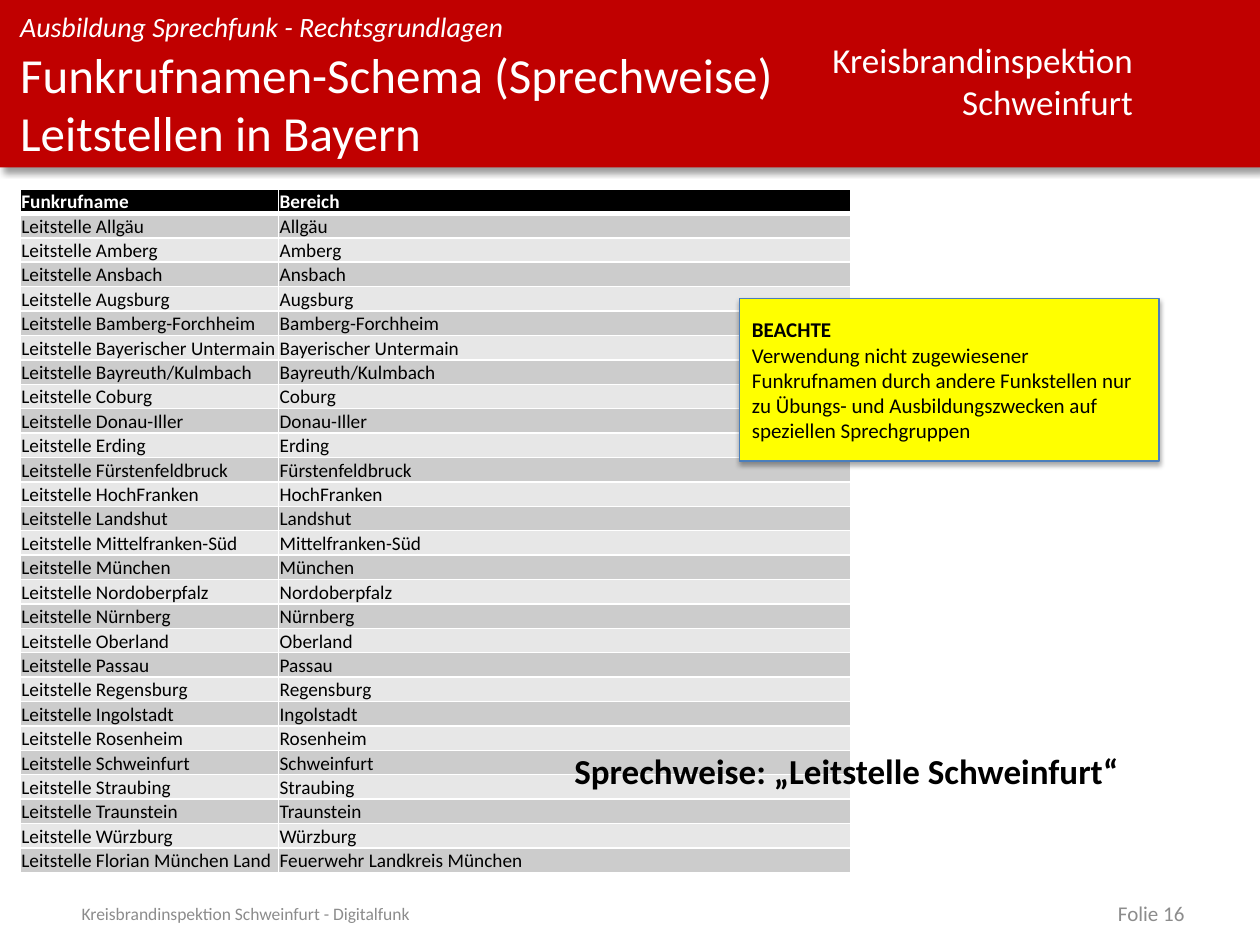
from dataclasses import dataclass

import lxml.etree
import pptx
import pptx.dml.color
import pptx.enum.shapes
import pptx.enum.text
import pptx.oxml.ns
import pptx.util

Inches = pptx.util.Inches
Pt = pptx.util.Pt
qn = pptx.oxml.ns.qn
Align = pptx.enum.text.PP_ALIGN
Anchor = pptx.enum.text.MSO_ANCHOR
AutoSize = pptx.enum.text.MSO_AUTO_SIZE

FONT = "Calibri"
BLACK, WHITE, GREY = "000000", "FFFFFF", "8C8C8C"
BANDS = ("CCCCCC", "E7E7E7")
AREAS = (
    "Allgäu", "Amberg", "Ansbach", "Augsburg", "Bamberg-Forchheim",
    "Bayerischer Untermain", "Bayreuth/Kulmbach", "Coburg", "Donau-Iller",
    "Erding", "Fürstenfeldbruck", "HochFranken", "Landshut",
    "Mittelfranken-Süd", "München", "Nordoberpfalz", "Nürnberg", "Oberland",
    "Passau", "Regensburg", "Ingolstadt", "Rosenheim", "Schweinfurt",
    "Straubing", "Traunstein", "Würzburg",
)


@dataclass(frozen=True)
class Style:
    size: float
    color: str = BLACK
    bold: bool = False
    italic: bool = False


@dataclass(frozen=True)
class Label:
    box: tuple[float, float, float, float]
    lines: tuple[str, ...]
    style: Style
    align: Align = Align.LEFT
    anchor: Anchor = Anchor.TOP
    inset: bool = True
    wrap: bool = True
    grow: bool = False


@dataclass(frozen=True)
class Shadow:
    alpha: int
    blur: float
    distance: float
    angle: int


LABELS = (
    Label((6.48, 0.26, 2.61, 0.77), ("Kreisbrandinspektion", "Schweinfurt"),
          Style(20, WHITE), align=Align.RIGHT, wrap=False, grow=True),
    Label((0.16, 0.08, 6.32, 0.27), ("Ausbildung Sprechfunk - Rechtsgrundlagen",),
          Style(16, WHITE, italic=True), inset=False, grow=True),
    Label((0.16, 0.35, 6.32, 0.99),
          ("Funkrufnamen-Schema (Sprechweise) Leitstellen in Bayern",),
          Style(28, WHITE), inset=False),
    Label((0.55, 7.15, 6.04, 0.2), ("Kreisbrandinspektion Schweinfurt - Digitalfunk",),
          Style(10, GREY), anchor=Anchor.MIDDLE),
    Label((7.17, 7.15, 2.33, 0.2), ("Folie 16",),
          Style(12, GREY), align=Align.RIGHT, anchor=Anchor.MIDDLE),
)
SPOKEN_FORM = Label((4.46, 5.9, 4.56, 0.44), ("Sprechweise: „Leitstelle Schweinfurt“",),
                    Style(20, bold=True), wrap=False, grow=True)


def rgb(value: str) -> pptx.dml.color.RGBColor:
    return pptx.dml.color.RGBColor.from_string(value)


def write(paragraph, text: str, style: Style, align: Align = Align.LEFT) -> None:
    paragraph.alignment = align
    run = paragraph.add_run()
    run.text = text
    run.font.name = FONT
    run.font.size = Pt(style.size)
    run.font.bold = style.bold
    run.font.italic = style.italic
    run.font.color.rgb = rgb(style.color)


def write_lines(frame, lines: tuple[tuple[str, Style], ...], align: Align = Align.LEFT) -> None:
    for index, (text, style) in enumerate(lines):
        paragraph = frame.add_paragraph() if index else frame.paragraphs[0]
        write(paragraph, text, style, align)


def draw_label(slide, label: Label) -> None:
    frame = slide.shapes.add_textbox(*map(Inches, label.box)).text_frame
    frame.word_wrap = label.wrap
    frame.auto_size = AutoSize.SHAPE_TO_FIT_TEXT if label.grow else AutoSize.NONE
    frame.vertical_anchor = label.anchor
    if not label.inset:
        frame.margin_left = frame.margin_top = Inches(0)
        frame.margin_right = frame.margin_bottom = Inches(0)
    write_lines(frame, tuple((line, label.style) for line in label.lines), label.align)


def draw_panel(slide, box: tuple[float, float, float, float], fill: str, shadow: Shadow):
    panel = slide.shapes.add_shape(
        pptx.enum.shapes.MSO_SHAPE.RECTANGLE, *map(Inches, box))
    panel.fill.solid()
    panel.fill.fore_color.rgb = rgb(fill)
    panel.line.fill.background()
    panel.shadow.inherit = False
    effects = panel._element.spPr.find(qn("a:effectLst"))
    outer = lxml.etree.SubElement(
        effects, qn("a:outerShdw"), blurRad=str(Pt(shadow.blur)),
        dist=str(Pt(shadow.distance)), dir=str(shadow.angle * 60000),
        algn="t", rotWithShape="0")
    tint = lxml.etree.SubElement(outer, qn("a:srgbClr"), val=BLACK)
    lxml.etree.SubElement(tint, qn("a:alpha"), val=str(shadow.alpha * 1000))
    return panel


def draw_borders(cell, bottom: float) -> None:
    properties = cell._tc.get_or_add_tcPr()
    for side, width in (("L", 1), ("R", 1), ("T", 1), ("B", bottom)):
        line = lxml.etree.SubElement(properties, qn(f"a:ln{side}"), w=str(Pt(width)))
        fill = lxml.etree.SubElement(line, qn("a:solidFill"))
        lxml.etree.SubElement(fill, qn("a:srgbClr"), val=WHITE)


def draw_cell(cell, text: str, style: Style, fill: str, bottom: float) -> None:
    draw_borders(cell, bottom)
    cell.fill.solid()
    cell.fill.fore_color.rgb = rgb(fill)
    cell.vertical_anchor = Anchor.BOTTOM
    cell.margin_left = cell.margin_right = cell.margin_top = Inches(0.01)
    cell.margin_bottom = Inches(0)
    write(cell.text_frame.paragraphs[0], text, style)


def draw_call_signs(slide) -> None:
    rows = [("Funkrufname", "Bereich")]
    rows += [(f"Leitstelle {area}", area) for area in AREAS]
    rows.append(("Leitstelle Florian München Land", "Feuerwehr Landkreis München"))
    widths = (2.05, 4.54)
    call_signs = slide.shapes.add_table(
        len(rows), len(widths), Inches(0.16), Inches(1.5),
        Inches(sum(widths)), Inches(5.42)).table
    for column, width in zip(call_signs.columns, widths):
        column.width = Inches(width)
    for row_index, row in enumerate(rows):
        header = row_index == 0
        style = Style(11, WHITE, bold=True) if header else Style(11)
        fill = BLACK if header else BANDS[(row_index - 1) % 2]
        for column_index, text in enumerate(row):
            draw_cell(call_signs.cell(row_index, column_index), text, style, fill,
                      3 if header else 1)


def draw_notice(slide) -> None:
    notice = draw_panel(slide, (5.87, 2.37, 3.33, 1.29), "FFFF00", Shadow(35, 3.1, 1.8, 90))
    notice.line.color.rgb = rgb("4B7EBC")
    notice.line.width = Pt(0.75)
    notice.text_frame.word_wrap = True
    notice.text_frame.vertical_anchor = Anchor.MIDDLE
    write_lines(notice.text_frame, (
        ("BEACHTE", Style(12, bold=True)),
        ("Verwendung nicht zugewiesener Funkrufnamen durch andere Funkstellen nur "
         "zu Übungs- und Ausbildungszwecken auf speziellen Sprechgruppen", Style(12)),
    ))


def main() -> None:
    deck = pptx.Presentation()
    deck.slide_width, deck.slide_height = Inches(10), Inches(7.5)
    slide = deck.slides.add_slide(deck.slide_layouts[6])
    draw_panel(slide, (0, 0, 10, 1.33), "C00000", Shadow(40, 4, 3, 45))
    for label in LABELS:
        draw_label(slide, label)
    draw_call_signs(slide)
    draw_label(slide, SPOKEN_FORM)
    draw_notice(slide)
    deck.save("out.pptx")


if __name__ == "__main__":
    main()
